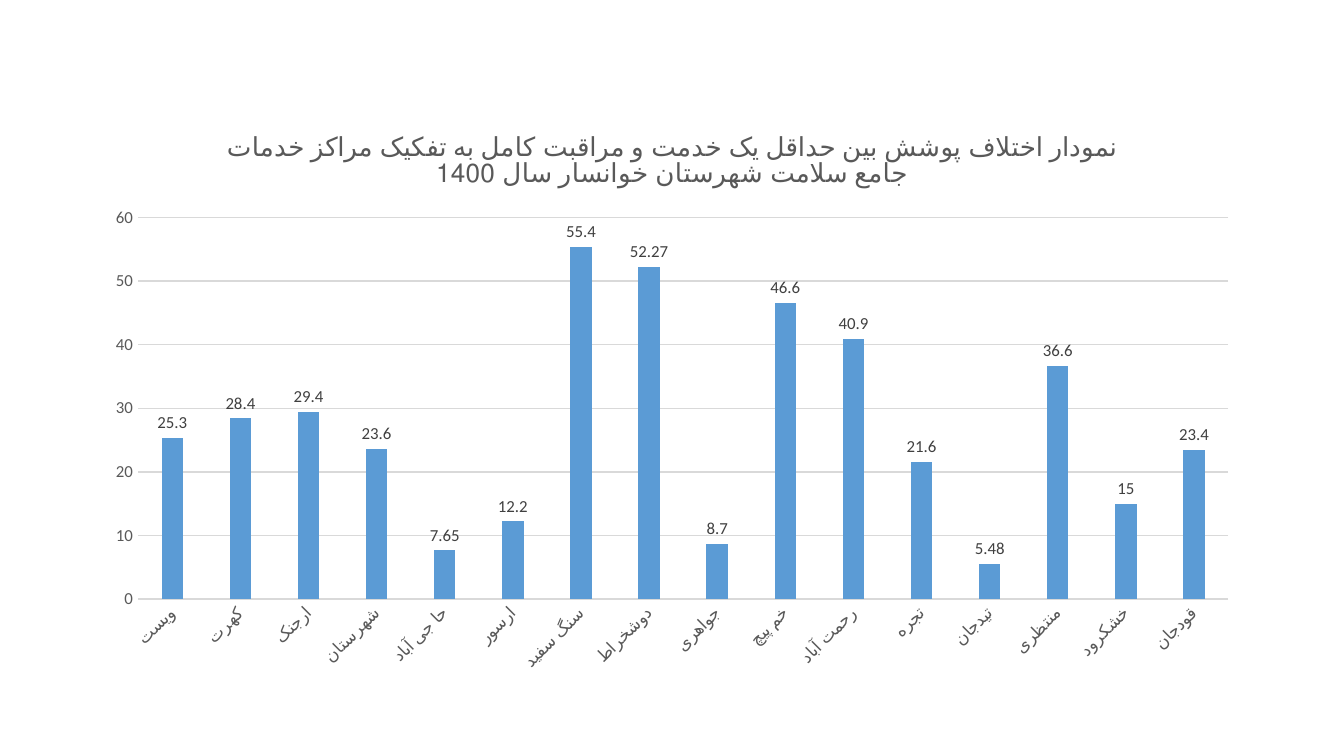
"""Build a slide with a column chart of the coverage gap per health centre."""
from pptx import Presentation
from pptx.chart.data import CategoryChartData
from pptx.dml.color import RGBColor
from pptx.enum.chart import XL_CHART_TYPE, XL_LABEL_POSITION, XL_TICK_MARK
from pptx.oxml.ns import qn
from pptx.util import Inches, Pt

COLUMNS = XL_CHART_TYPE.COLUMN_CLUSTERED
OUTSIDE_END = XL_LABEL_POSITION.OUTSIDE_END
NO_TICK = XL_TICK_MARK.NONE

FONT = "Calibri"
BAR, GRID, GREY, DARK = "5B9BD5", "D9D9D9", "595959", "404040"
SLANT = "-2700000"

TITLE = (
    "نمودار اختلاف پوشش بین حداقل یک خدمت و مراقبت کامل به تفکیک مراکز خدمات "
    "جامع سلامت شهرستان خوانسار سال 1400"
)
COVERAGE_GAPS = [
    ("ویست", 25.3),
    ("کهرت", 28.4),
    ("ارجنک", 29.4),
    ("شهرستان", 23.6),
    ("حا جی آباد", 7.65),
    ("ارسور", 12.2),
    ("سنگ سفید", 55.4),
    ("دوشخراط", 52.27),
    ("جواهری", 8.7),
    ("خم پیچ", 46.6),
    ("رحمت آباد", 40.9),
    ("تجره", 21.6),
    ("تیدجان", 5.48),
    ("منتظری", 36.6),
    ("خشکرود", 15),
    ("قودجان", 23.4),
]


def color(hex_string):
    return RGBColor.from_string(hex_string)


def style_font(font, size, hex_string):
    font.name = FONT
    font.size = Pt(size)
    font.bold = False
    font.color.rgb = color(hex_string)


def style_line(line):
    line.color.rgb = color(GRID)
    line.width = Pt(0.75)


def add_title(chart):
    chart.has_title = True
    chart.chart_title.include_in_layout = False
    heading = chart.chart_title.text_frame.paragraphs[0]
    style_font(heading.font, 14, GREY)
    run = heading.add_run()
    run.text = TITLE
    style_font(run.font, 14, GREY)


def style_axes(chart):
    centres, scale = chart.category_axis, chart.value_axis
    for axis in (centres, scale):
        axis.major_tick_mark = axis.minor_tick_mark = NO_TICK
        style_font(axis.tick_labels.font, 9, GREY)
    style_line(centres.format.line)
    slant = centres._element.find(qn("c:txPr")).find(qn("a:bodyPr"))
    slant.set("rot", SLANT)
    slant.set("vert", "horz")
    scale.format.line.fill.background()
    scale.has_major_gridlines = True
    style_line(scale.major_gridlines.format.line)


def style_columns(chart):
    plot = chart.plots[0]
    plot.vary_by_categories = False
    plot.gap_width, plot.overlap = 219, -27
    gaps = plot.series[0]
    gaps.invert_if_negative = False
    gaps.format.fill.solid()
    gaps.format.fill.fore_color.rgb = color(BAR)
    labels = gaps.data_labels
    labels.show_value = True
    labels.position = OUTSIDE_END
    style_font(labels.font, 9, DARK)


def main():
    deck = Presentation()
    deck.slide_width = Inches(10)
    deck.slide_height = deck.slide_width * 9 // 16
    slide = deck.slides.add_slide(deck.slide_layouts[6])

    centres, gaps = zip(*COVERAGE_GAPS)
    chart_data = CategoryChartData()
    chart_data.categories = centres
    chart_data.add_series(TITLE, gaps)
    chart = slide.shapes.add_chart(
        COLUMNS, Inches(0.69), Inches(0.81), Inches(8.62), Inches(4.26), chart_data
    ).chart
    style_font(chart.font, 10, "000000")
    chart.has_legend = False
    add_title(chart)
    style_axes(chart)
    style_columns(chart)

    deck.save("out.pptx")


if __name__ == "__main__":
    main()
